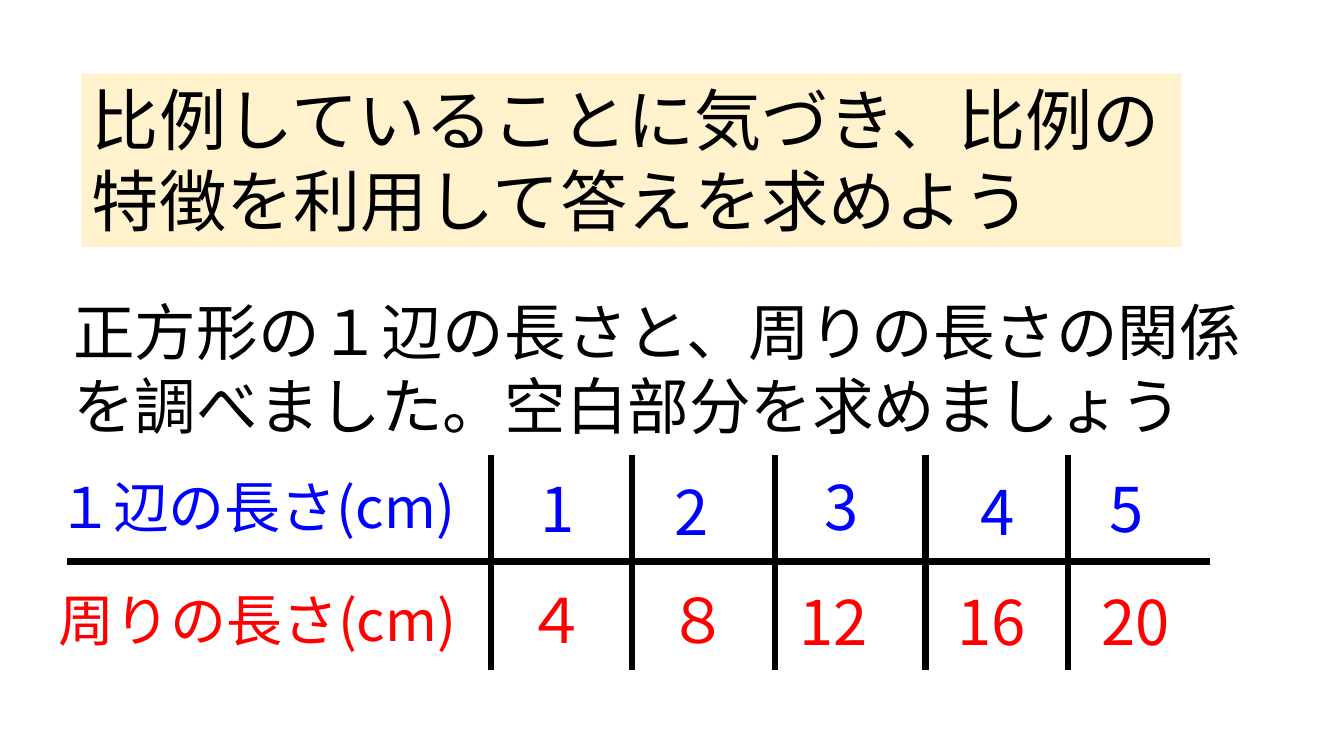
import dataclasses

import pptx
import pptx.dml.color
import pptx.enum.shapes
import pptx.enum.text
import pptx.oxml
import pptx.oxml.ns
import pptx.util

Cm = pptx.util.Cm


@dataclasses.dataclass(frozen=True)
class Theme:
    """Colours, font and type sizes of the lesson slide."""

    font: str = "Noto Sans CJK JP"
    ink: str = "000000"
    goal_fill: str = "FFF2CC"
    side: str = "0000FF"
    perimeter: str = "FF0000"
    goal_size: int = 48
    body_size: int = 44
    label_size: int = 40
    rule_width: float = 4.5


THEME = Theme()
DIVIDERS = (12.37, 15.93, 19.53, 23.32, 26.92)
SIDE_VALUES = (
    ("1", 13.36, 11.73, 1.85),
    ("2", 16.74, 11.81, 1.85),
    ("3", 20.52, 11.68, 2.03),
    ("4", 24.46, 11.81, 2.03),
    ("5", 27.71, 11.73, 2.03),
)
PERIMETER_VALUES = (
    ("４", 13.0, 14.53, 2.46),
    ("８", 16.56, 14.53, 2.31),
    ("12", 19.89, 14.58, 3.02),
    ("16", 23.88, 14.58, 3.05),
    ("20", 27.51, 14.58, 2.79),
)


def rgb(colour):
    """Return the colour object for a hex string."""
    return pptx.dml.color.RGBColor.from_string(colour)


def write(frame, text, *, size, colour=THEME.ink):
    """Fill a text frame with one left-aligned, top-anchored paragraph."""
    frame.word_wrap = True
    frame.auto_size = pptx.enum.text.MSO_AUTO_SIZE.NONE
    frame.vertical_anchor = pptx.enum.text.MSO_ANCHOR.TOP
    paragraph = frame.paragraphs[0]
    paragraph.alignment = pptx.enum.text.PP_ALIGN.LEFT
    run = paragraph.add_run()
    run.text = text
    run.font.size = pptx.util.Pt(size)
    run.font.color.rgb = rgb(colour)
    run.font.name = THEME.font
    east_asian = pptx.oxml.parse_xml(
        f'<a:ea {pptx.oxml.ns.nsdecls("a")} typeface="{THEME.font}"/>'
    )
    run.font.fill
    run.font._element.append(east_asian)


def add_goal(slide, text):
    """Place the lesson goal in the tinted title placeholder."""
    goal = slide.shapes.title
    goal.left, goal.top = Cm(2.06), Cm(1.85)
    goal.width, goal.height = Cm(27.71), Cm(4.37)
    goal.fill.solid()
    goal.fill.fore_color.rgb = rgb(THEME.goal_fill)
    write(goal.text_frame, text, size=THEME.goal_size)


def add_text(slide, text, left, top, width, height, **text_format):
    """Add a text box with its format."""
    box = slide.shapes.add_textbox(Cm(left), Cm(top), Cm(width), Cm(height))
    write(box.text_frame, text, **text_format)


def add_rule(slide, x1, y1, x2, y2):
    """Draw one straight rule of the table."""
    rule = slide.shapes.add_connector(
        pptx.enum.shapes.MSO_CONNECTOR.STRAIGHT, Cm(x1), Cm(y1), Cm(x2), Cm(y2)
    )
    rule.line.color.rgb = rgb(THEME.ink)
    rule.line.width = pptx.util.Pt(THEME.rule_width)
    no_effects = pptx.oxml.parse_xml(f'<a:effectLst {pptx.oxml.ns.nsdecls("a")}/>')
    rule._element.spPr.append(no_effects)


def add_row(slide, label, label_box, values, colour):
    """Add a row label and its values in one colour."""
    add_text(slide, label, *label_box, size=THEME.label_size, colour=colour)
    for value, left, top, width in values:
        add_text(slide, value, left, top, width, 2.13,
                 size=THEME.body_size, colour=colour)


def main():
    """Build and save the slide."""
    deck = pptx.Presentation()
    deck.slide_width, deck.slide_height = Cm(33.87), Cm(19.05)
    slide = deck.slides.add_slide(deck.slide_layouts.get_by_name("Title Only"))

    add_goal(slide, "比例していることに気づき、比例の特徴を利用して答えを求めよう")
    add_text(slide, "正方形の１辺の長さと、周りの長さの関係を調べました。空白部分を求めましょう",
             1.6, 7.29, 30.12, 4.01, size=THEME.body_size)
    add_row(slide, "１辺の長さ(cm)", (1.19, 11.79, 11.28, 1.96),
            SIDE_VALUES, THEME.side)
    add_row(slide, "周りの長さ(cm)", (1.22, 14.63, 11.53, 1.96),
            PERIMETER_VALUES, THEME.perimeter)

    add_rule(slide, 1.7, 14.15, 30.5, 14.15)
    for divider in DIVIDERS:
        add_rule(slide, divider, 11.46, divider, 16.89)

    deck.save("out.pptx")


if __name__ == "__main__":
    main()
